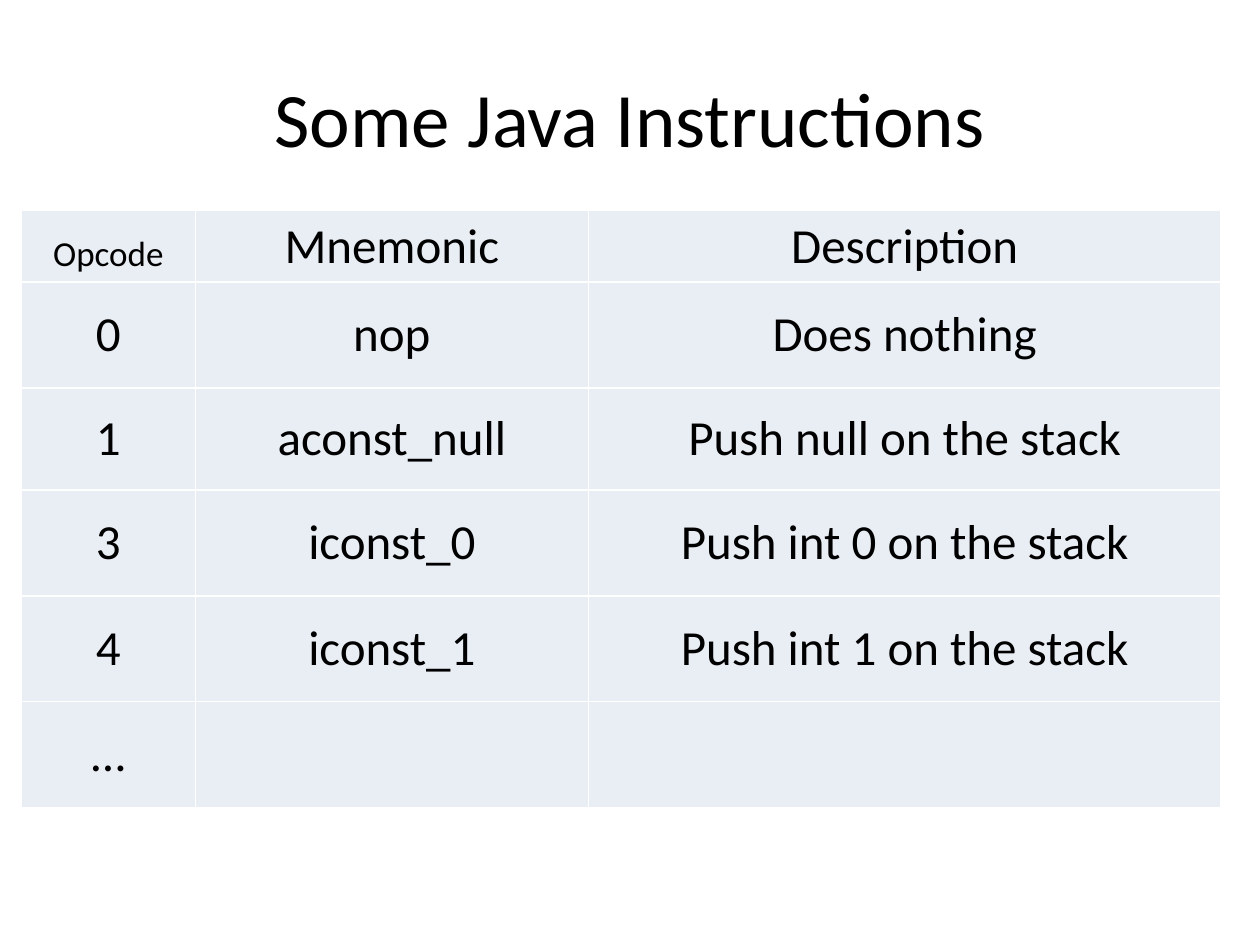
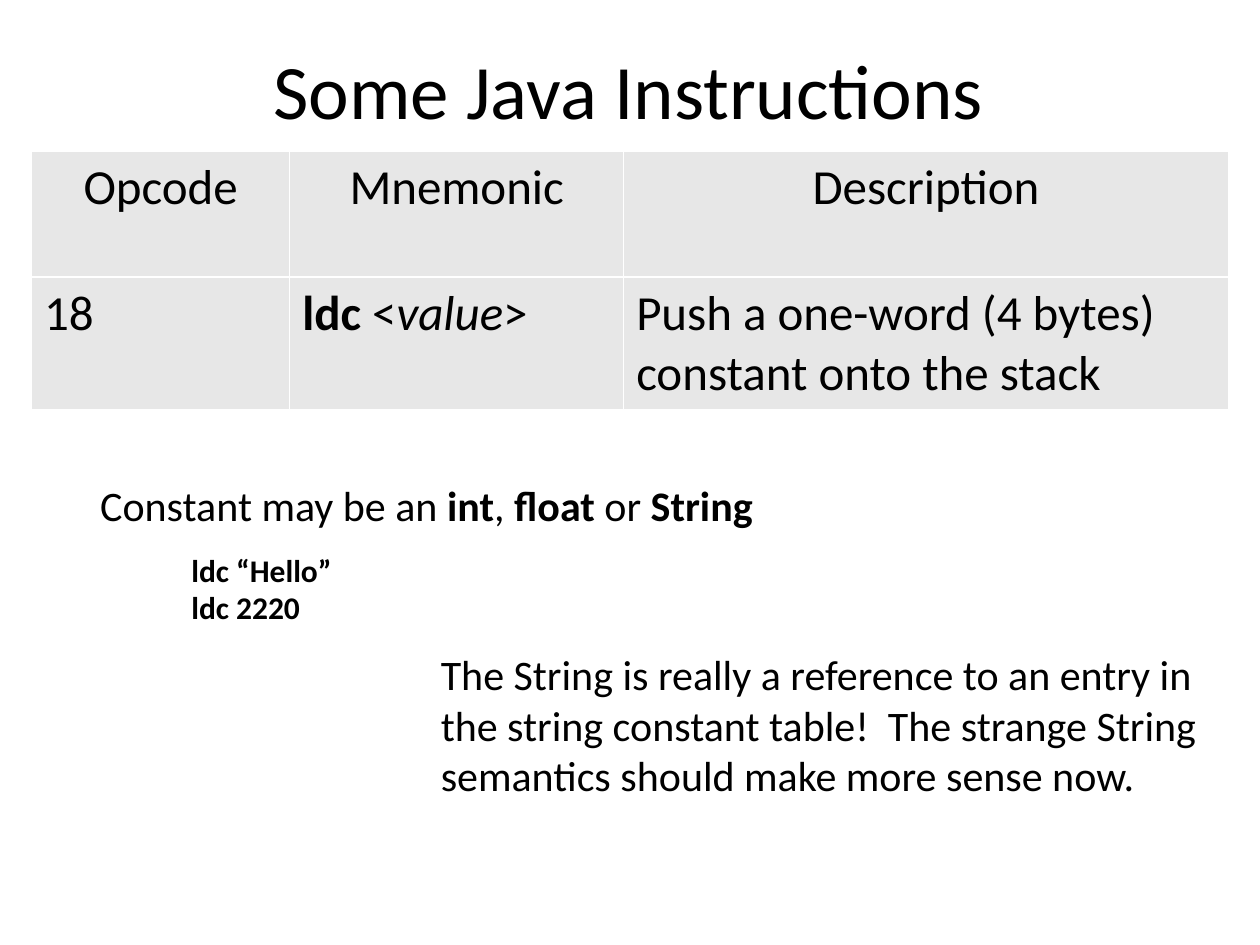
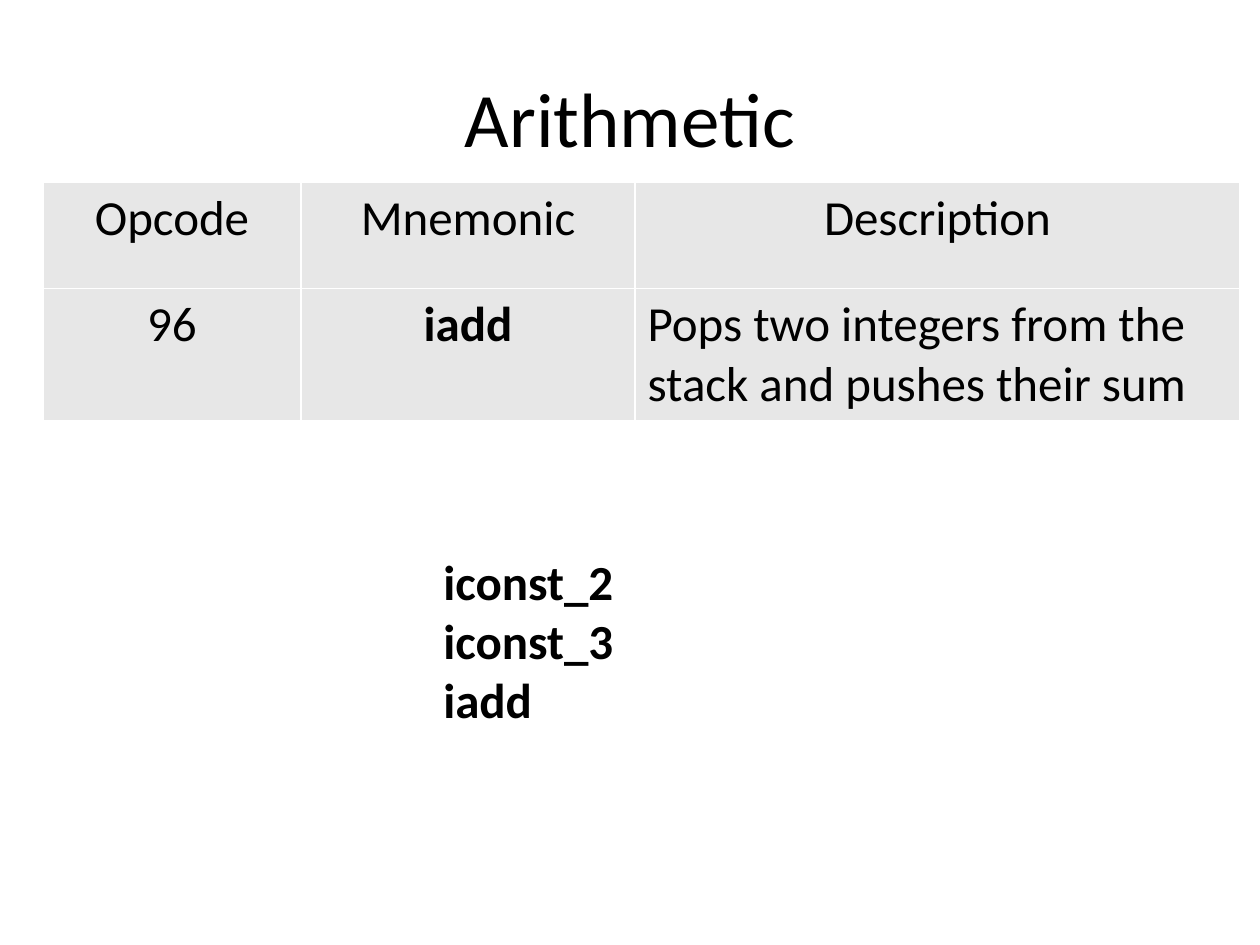
from dataclasses import dataclass

from lxml.etree import SubElement as Sub
from pptx import Presentation
from pptx.dml.color import RGBColor as Rgb
from pptx.enum.text import MSO_ANCHOR as Anchor, MSO_AUTO_SIZE as Fit, PP_ALIGN as Align
from pptx.oxml.ns import qn
from pptx.util import Inches, Pt


@dataclass(frozen=True)
class Theme:
    font: str = "Calibri"
    ink: str = "000000"
    rule: str = "FFFFFF"
    blue: str = "E9EDF4"
    gray: str = "E7E7E7"
    title: int = 44
    large: int = 28
    body: int = 24
    small: int = 20
    code: int = 18


LOOK = Theme()
BOLD = {"bold": True}
HEAD = ["Opcode", "Mnemonic", "Description"]
COLS = [2.05, 2.65, 4.8]  # columns of the two-row tables


def apply(item, form):
    for name, value in form.items():
        setattr(item, name, value)


def write(frame, lines, size, align=Align.LEFT, **form):
    """Fill a frame; a line is a string or a list of (text, format) runs."""
    for i, line in enumerate(lines):
        para = frame.paragraphs[0] if i == 0 else frame.add_paragraph()
        para.alignment = align
        for text, extra in [(line, {})] if isinstance(line, str) else line:
            run = para.add_run()
            run.text = text
            apply(run.font, {"name": LOOK.font, "size": Pt(size), **form, **extra})
            run.font.color.rgb = Rgb.from_string(LOOK.ink)


def add_text(slide, at, lines, size, align=Align.LEFT, frame=None, **form):
    box = slide.shapes.add_textbox(*map(Inches, at)).text_frame
    apply(box, {"word_wrap": True, **(frame or {})})
    write(box, lines, size, align, **form)


def add_title(slide, text, left=0.5, top=0.3):
    add_text(slide, (left, top, 9, 1.25), [text], LOOK.title, Align.CENTER,
             {"vertical_anchor": Anchor.MIDDLE})


def style(cell, fill):
    cell.fill.solid()
    cell.fill.fore_color.rgb = Rgb.from_string(fill)
    props = cell._tc.get_or_add_tcPr()
    for i, side in enumerate(("lnL", "lnR", "lnT", "lnB")):
        line = Sub(props, qn(f"a:{side}"), w=str(Pt(1)))
        Sub(Sub(line, qn("a:solidFill")), qn("a:srgbClr"), val=LOOK.rule)
        props.insert(i, line)


def add_grid(slide, left, top, cols, rows, data, fill, form):
    """Draw a table; form(row, col) gives a cell's size, alignment and anchor."""
    table = slide.shapes.add_table(
        len(rows), len(cols), *map(Inches, (left, top, sum(cols), sum(rows)))).table
    apply(table, {"first_row": False, "horz_banding": False})
    for col, width in zip(table.columns, cols):
        col.width = Inches(width)
    for r, (row, height) in enumerate(zip(table.rows, rows)):
        row.height = Inches(height)
        for c, cell in enumerate(row.cells):
            style(cell, fill)
            size, align, cell.vertical_anchor = form(r, c)
            if data[r][c]:
                write(cell.text_frame, [data[r][c]], size, align)


def codes(row, col):
    if row:
        return LOOK.large, Align.CENTER, Anchor.MIDDLE
    if col:
        return LOOK.large, Align.CENTER, Anchor.TOP
    return LOOK.small, Align.CENTER, Anchor.BOTTOM


def plain(row, col):
    return LOOK.large, Align.LEFT if row else Align.CENTER, Anchor.TOP


def sums(row, col):
    left = row and col == 2
    return LOOK.large, Align.LEFT if left else Align.CENTER, Anchor.TOP


def basics(slide):
    add_title(slide, "Some Java Instructions")
    data = [HEAD,
            ["0", "nop", "Does nothing"],
            ["1", "aconst_null", "Push null on the stack"],
            ["3", "iconst_0", "Push int 0 on the stack"],
            ["4", "iconst_1", "Push int 1 on the stack"],
            ["…", "", ""]]
    add_grid(slide, 0.17, 1.67, [1.38, 3.12, 5.02],
             [0.57, 0.84, 0.81] + [0.84] * 3, data, LOOK.blue, codes)


def constants(slide):
    add_title(slide, "Some Java Instructions", 0.49, 0.08)
    load = [("ldc", BOLD), (" <", {}), ("value", {"italic": True}), (">", {})]
    data = [HEAD, ["18", load, "Push a one-word (4 bytes) constant onto the stack"]]
    add_grid(slide, 0.25, 1.2, COLS, [1, 1.05], data, LOOK.gray, plain)

    # Examples and remarks
    add_text(slide, (1.42, 4.32, 2.28, 0.71), ["ldc “Hello”", "ldc 2220"],
             LOOK.code, **BOLD)
    kinds = [("Constant may be an ", {}), ("int", BOLD), (", ", {}),
             ("float", BOLD), (" or ", {}), ("String", BOLD)]
    add_text(slide, (0.67, 3.76, 5.43, 0.5), [kinds], LOOK.body, Align.CENTER,
             {"word_wrap": False, "auto_size": Fit.SHAPE_TO_FIT_TEXT})
    add_text(slide, (3.4, 5.1, 6.36, 1.31),
             ["The String is really a reference to an entry in the string constant "
              "table!  The strange String semantics should make more sense now."],
             LOOK.body)


def sum_up(slide):
    add_title(slide, "Arithmetic")
    data = [HEAD, ["96", [("iadd", BOLD)],
                   "Pops two integers from the stack and pushes their sum"]]
    add_grid(slide, 0.34, 1.45, COLS, [0.84, 1.05], data, LOOK.gray, sums)
    add_text(slide, (3.42, 4.33, 1.57, 1.51), ["iconst_2", "iconst_3", "iadd"],
             LOOK.large, frame={"word_wrap": False}, **BOLD)


def main():
    deck = Presentation()
    apply(deck, {"slide_width": Inches(10), "slide_height": Inches(7.5)})
    for build in (basics, constants, sum_up):
        build(deck.slides.add_slide(deck.slide_layouts[6]))
    deck.save("out.pptx")


if __name__ == "__main__":
    main()
